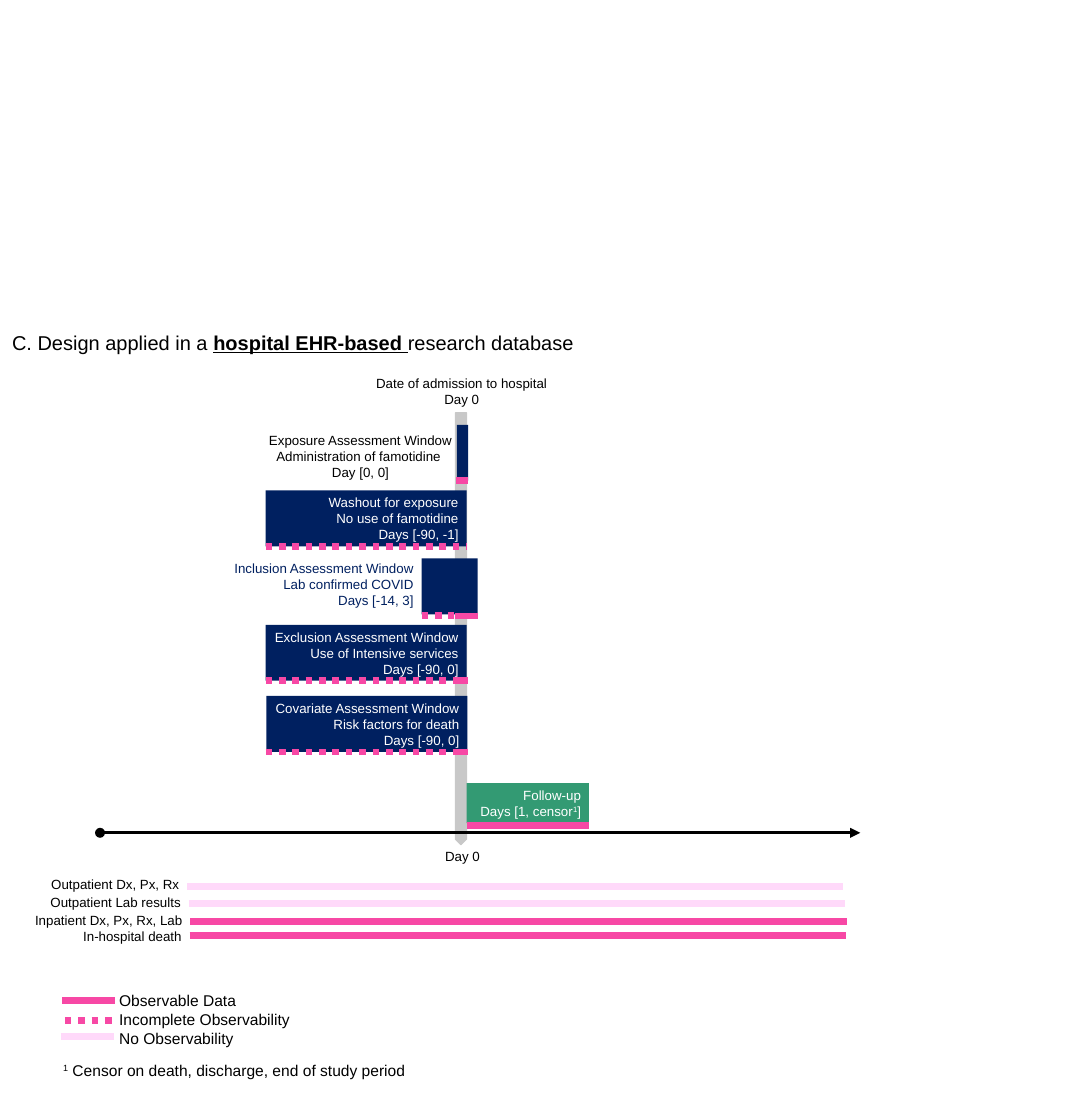
from pptx import Presentation
from pptx.dml.color import RGBColor
from pptx.enum.dml import MSO_LINE
from pptx.enum.shapes import MSO_CONNECTOR, MSO_SHAPE
from pptx.enum.text import MSO_ANCHOR, MSO_AUTO_SIZE, PP_ALIGN
from pptx.oxml.ns import qn
from pptx.util import Inches, Pt
from lxml.etree import SubElement

NAVY, GREEN, GRAY = "002060", "339A73", "C8C8C8"
PINK, PALE = "F748A5", "FFD9FA"
BLACK, WHITE = "000000", "FFFFFF"
LEFT, MID, RIGHT = PP_ALIGN.LEFT, PP_ALIGN.CENTER, PP_ALIGN.RIGHT


def rgb(code):
    return RGBColor.from_string(code)


def write(frame, lines, align=LEFT, color=BLACK, size=12):
    """One paragraph per line; a line is a string or a list of (text, style)."""
    for i, line in enumerate(lines):
        para = frame.paragraphs[0] if i == 0 else frame.add_paragraph()
        para.alignment = align
        para.font.name = "Arial"
        para.font.size = Pt(size)
        para.font.color.rgb = rgb(color)
        for text, style in [(line, "")] if isinstance(line, str) else line:
            run = para.add_run()
            run.text = text
            if style == "strong":
                run.font.bold = run.font.underline = True
            elif style == "super":
                run._r.get_or_add_rPr().set("baseline", "30000")


def label(slide, x, y, w, h, lines, align=LEFT, color=BLACK, size=12, wrap=False):
    box = slide.shapes.add_textbox(Inches(x), Inches(y), Inches(w), Inches(h))
    box.text_frame.word_wrap = wrap
    write(box.text_frame, lines, align, color, size)


def block(slide, x, y, w, h, fill, lines=(), kind=MSO_SHAPE.RECTANGLE):
    shape = slide.shapes.add_shape(kind, Inches(x), Inches(y), Inches(w), Inches(h))
    shape.shadow.inherit = False
    shape.fill.solid()
    shape.fill.fore_color.rgb = rgb(fill)
    shape.line.fill.background()
    shape.text_frame.word_wrap = True
    shape.text_frame.vertical_anchor = MSO_ANCHOR.TOP
    write(shape.text_frame, lines, RIGHT, WHITE)
    return shape


def bar(slide, x, y, w, color=PINK, dots=False, width=6):
    line = slide.shapes.add_connector(
        MSO_CONNECTOR.STRAIGHT, Inches(x), Inches(y), Inches(x + w), Inches(y))
    line.line.color.rgb = rgb(color)
    line.line.width = Pt(width)
    if dots:
        line.line.dash_style = MSO_LINE.ROUND_DOT
        line.line._ln.find(qn("a:prstDash")).set("val", "sysDot")
    SubElement(line._element.spPr, qn("a:effectLst"))
    return line


def heading(slide):
    title = slide.shapes.title
    title.left, title.top = Inches(0.05), Inches(4.08)
    title.width, title.height = Inches(11.91), Inches(0.4)
    frame = title.text_frame
    frame.auto_size = MSO_AUTO_SIZE.NONE
    frame.vertical_anchor = MSO_ANCHOR.MIDDLE
    write(frame, [[("C. Design applied in a ", ""), ("hospital EHR-based ", "strong"),
                   ("research database", "")]], size=18)


def axis(slide):
    # Day 0 marker, pointing down
    mark = block(slide, 3.06, 7.79, 5.4, 0.14, GRAY, kind=MSO_SHAPE.PENTAGON)
    mark.rotation = 90
    mark.line.color.rgb = rgb(GRAY)
    mark.line.width = Pt(1)
    # Time line
    line = bar(slide, 1.25, 10.41, 9.5, BLACK, width=3)
    for tag, kind in (("a:headEnd", "oval"), ("a:tailEnd", "triangle")):
        SubElement(line.line._ln, qn(tag)).set("type", kind)
    label(slide, 4.59, 4.64, 2.36, 0.5,
          ["Date of admission to hospital", "Day 0"], MID)
    label(slide, 2.45, 10.55, 6.66, 0.3, ["Day 0"], MID, wrap=True)


def windows(slide):
    # Exposure
    label(slide, 3.16, 5.35, 2.69, 0.71,
          ["Exposure Assessment Window Administration of famotidine ",
           "Day [0, 0]"], MID, wrap=True)
    block(slide, 5.71, 5.31, 0.14, 0.7, NAVY)
    bar(slide, 5.7, 6.01, 0.15)
    # Inclusion
    label(slide, 2.81, 6.95, 2.46, 0.7,
          ["Inclusion Assessment Window", "Lab confirmed COVID", "Days [-14, 3]"],
          RIGHT, NAVY)
    block(slide, 5.27, 6.98, 0.7, 0.7, NAVY)
    bar(slide, 5.27, 7.69, 0.4, dots=True)
    bar(slide, 5.69, 7.7, 0.28)
    # Windows that reach back 90 days
    for x, y, name, what, last in (
            (3.32, 6.13, "Washout for exposure", "No use of famotidine", -1),
            (3.32, 7.81, "Exclusion Assessment Window", "Use of Intensive services", 0),
            (3.33, 8.7, "Covariate Assessment Window", "Risk factors for death", 0)):
        block(slide, x, y, 2.51, 0.7, NAVY, [name, what, f"Days [-90, {last}]"])
        bar(slide, 3.32, y + 0.7, 2.51, dots=True)
        if last == 0:
            bar(slide, 5.7, y + 0.7, 0.15)
    # Follow-up
    block(slide, 5.83, 9.79, 1.53, 0.5, GREEN,
          ["Follow-up", [("Days [1, censor", ""), ("1", "super"), ("]", "")]])
    bar(slide, 5.83, 10.32, 1.53)


def sources(slide):
    for name, top, x, y, color in (
            ("Outpatient Dx, Px, Rx", 10.9, 2.34, 11.08, PALE),
            ("Outpatient Lab results", 11.13, 2.36, 11.29, PALE),
            ("Inpatient Dx, Px, Rx, Lab", 11.35, 2.38, 11.52, PINK),
            ("In-hospital death", 11.55, 2.37, 11.69, PINK)):
        label(slide, 0.2, top, x - 0.2, 0.3, [name], RIGHT, wrap=True)
        bar(slide, x, y, 8.2, color)


def legend(slide):
    for name, top, w, x, y, color, dots in (
            ("Observable Data", 12.34, 1.67, 0.78, 12.51, PINK, False),
            ("Incomplete Observability", 12.57, 2.35, 0.81, 12.76, PINK, True),
            ("No Observability", 12.81, 1.64, 0.76, 12.96, PALE, False)):
        label(slide, 1.39, top, w, 0.34, [name], size=14)
        bar(slide, x, y, 0.66, color, dots)
    label(slide, 0.69, 13.21, 4.51, 0.34,
          [[("1", "super"), (" Censor on death, discharge, end of study period", "")]],
          size=14)


def main():
    deck = Presentation()
    deck.slide_width, deck.slide_height = Inches(40 / 3), Inches(14)
    slide = deck.slides.add_slide(deck.slide_layouts[5])
    for part in (heading, axis, windows, sources, legend):
        part(slide)
    deck.save("out.pptx")


if __name__ == "__main__":
    main()
